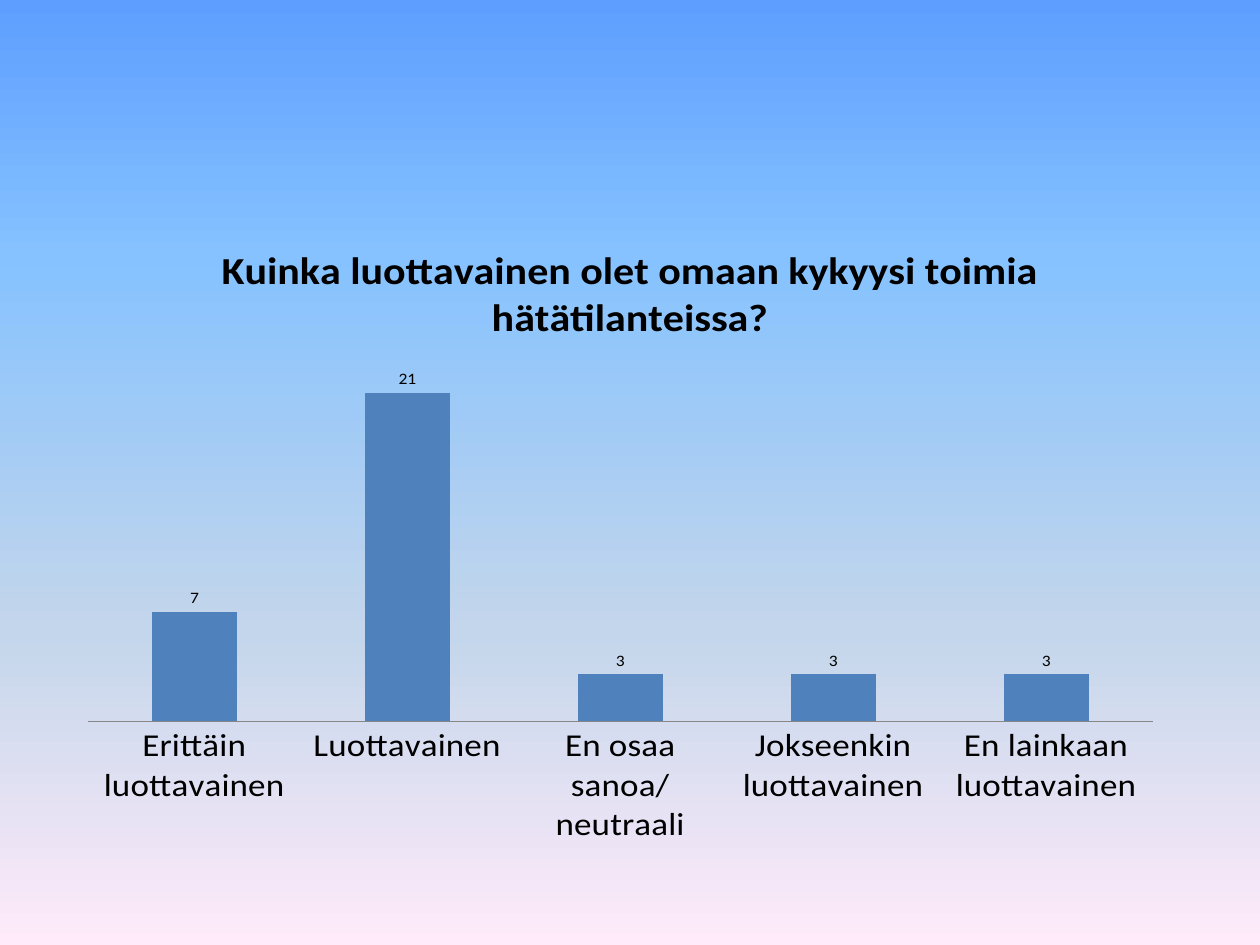
from dataclasses import dataclass

from lxml import etree
from pptx import Presentation
from pptx import util as u
from pptx.chart.data import CategoryChartData
from pptx.dml.color import RGBColor
from pptx.enum import chart as ch
from pptx.oxml import ns

# Content
QUESTION = "Kuinka luottavainen olet omaan kykyysi toimia hätätilanteissa?"
ANSWERS = [
    ("Erittäin luottavainen", 7),
    ("Luottavainen", 21),
    ("En osaa sanoa/neutraali", 3),
    ("Jokseenkin luottavainen", 3),
    ("En lainkaan luottavainen", 3),
]


@dataclass(frozen=True)
class Theme:
    font: str = "Calibri"
    text: str = "000000"
    bar: str = "4F81BD"
    axis: str = "868686"
    sky: tuple = ((0, "5E9EFF"), (27, "85C2FF"), (67, "C4D6EB"), (100, "FFEBFA"))
    title_size: int = 24
    answer_size: int = 20
    value_size: int = 10


THEME = Theme()
SLIDE = (1260, 945)
CHART = (63, 220, 1134, 624)
PLOT = {"x": 0.022, "y": 0.194, "w": 0.939, "h": 0.69}  # shares of the chart


def px(length):
    return u.Emu(round(length * 914400 / 126))


def style(font, size, bold=False):
    font.name = THEME.font
    font.size = u.Pt(size)
    font.bold = bold
    font.color.rgb = RGBColor.from_string(THEME.text)


def paint_background(slide):
    fill = slide.background.fill
    fill.gradient()
    gradient = slide.background.fill._fill._gradFill
    stops = gradient.find(ns.qn("a:gsLst"))
    for stop in list(stops):
        stops.remove(stop)
    for percent, colour in THEME.sky:
        stop = etree.SubElement(stops, ns.qn("a:gs"), pos=str(percent * 1000))
        etree.SubElement(stop, ns.qn("a:srgbClr"), val=colour)
    gradient.find(ns.qn("a:lin")).set("ang", str(90 * 60000))


def place_plot(chart):
    area = chart._chartSpace.chart.plotArea
    for old in area.findall(ns.qn("c:layout")):
        area.remove(old)
    layout = etree.Element(ns.qn("c:layout"))
    area.insert(0, layout)
    manual = etree.SubElement(layout, ns.qn("c:manualLayout"))
    settings = {"layoutTarget": "inner", "xMode": "edge", "yMode": "edge", **PLOT}
    for tag, value in settings.items():
        etree.SubElement(manual, ns.qn(f"c:{tag}"), val=str(value))


def add_answers(slide):
    data = CategoryChartData()
    data.categories = [answer for answer, _ in ANSWERS]
    data.add_series("Series 1", [count for _, count in ANSWERS])
    chart = slide.shapes.add_chart(
        ch.XL_CHART_TYPE.COLUMN_CLUSTERED, *map(px, CHART), data
    ).chart
    style(chart.font, THEME.value_size)
    chart.has_legend = False

    # Question as chart title
    chart.has_title = True
    chart.chart_title.include_in_layout = False
    title = chart.chart_title.text_frame
    title.text = QUESTION
    style(title.paragraphs[0].runs[0].font, THEME.title_size, bold=True)

    # Axes
    answers = chart.category_axis
    answers.major_tick_mark = ch.XL_TICK_MARK.NONE
    answers.format.line.color.rgb = RGBColor.from_string(THEME.axis)
    style(answers.tick_labels.font, THEME.answer_size)
    counts = chart.value_axis
    counts.visible = False
    counts.has_major_gridlines = False
    counts.minimum_scale = 0

    # Bars and their values
    bars = chart.plots[0]
    bars.gap_width = 150
    bars.overlap = -25
    bars.vary_by_categories = False
    fill = bars.series[0].format.fill
    fill.solid()
    fill.fore_color.rgb = RGBColor.from_string(THEME.bar)
    bars.has_data_labels = True
    bars.data_labels.show_value = True
    bars.data_labels.position = ch.XL_LABEL_POSITION.OUTSIDE_END
    style(bars.data_labels.font, THEME.value_size)
    place_plot(chart)


def main():
    deck = Presentation()
    deck.slide_width, deck.slide_height = map(px, SLIDE)
    slide = deck.slides.add_slide(deck.slide_layouts[6])
    paint_background(slide)
    add_answers(slide)
    deck.save("out.pptx")


if __name__ == "__main__":
    main()
